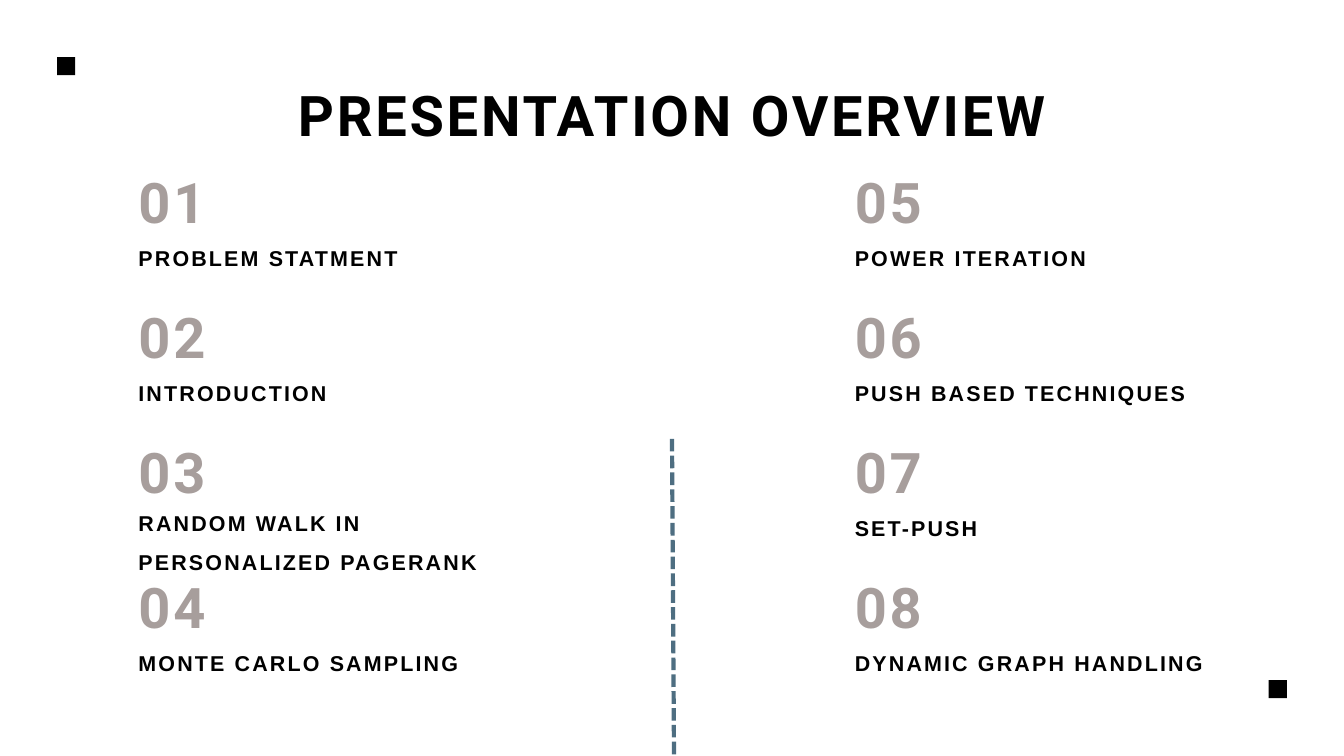
from lxml.etree import SubElement
from pptx import Presentation
from pptx.dml.color import RGBColor
from pptx.enum.dml import MSO_LINE
from pptx.enum.shapes import MSO_CONNECTOR, MSO_SHAPE
from pptx.enum.text import MSO_ANCHOR, MSO_AUTO_SIZE, PP_ALIGN
from pptx.oxml.ns import qn
from pptx.util import Inches, Pt

BLACK = RGBColor(0x00, 0x00, 0x00)
TAUPE = RGBColor(0xA7, 0x9E, 0x9C)
SLATE = RGBColor(0x4E, 0x6E, 0x81)

TITLE = "PRESENTATION OVERVIEW"
COLUMNS = [
    ["PROBLEM STATMENT", "INTRODUCTION",
     "RANDOM WALK IN PERSONALIZED PAGERANK", "MONTE CARLO SAMPLING"],
    ["POWER ITERATION", "PUSH BASED TECHNIQUES",
     "SET-PUSH", "DYNAMIC GRAPH HANDLING"],
]
TWO_LINE_TOPIC = "RANDOM WALK IN PERSONALIZED PAGERANK"

COLUMN_LEFTS = [2.06, 12.72]
COLUMN_WIDTH = 5.22
FIRST_ROW_TOP = 2.33
ROW_PITCH = 2.01
TOPIC_OFFSET = 1.25
CORNER_SQUARES = [(0.85, 0.85), (18.88, 10.12)]
SQUARE_SIZE = 0.27

HEADING = dict(font="Roboto", size=60, spacing=3, line_spacing=Pt(84))
TOPIC = dict(font="Arial", size=23, spacing=2.3, line_spacing=Pt(32.2))


def write_text(shape, text, style, color, alignment=PP_ALIGN.LEFT):
    frame = shape.text_frame
    frame.word_wrap = True
    frame.auto_size = MSO_AUTO_SIZE.SHAPE_TO_FIT_TEXT
    frame.vertical_anchor = MSO_ANCHOR.TOP
    frame.margin_left = frame.margin_right = 0
    frame.margin_top = frame.margin_bottom = 0
    paragraph = frame.paragraphs[0]
    paragraph.alignment = alignment
    paragraph.line_spacing = style["line_spacing"]
    paragraph.font.name = style["font"]
    paragraph.font.size = Pt(style["size"])
    paragraph.font.bold = True
    paragraph.font.color.rgb = color
    run = paragraph.add_run()
    run.text = text
    run._r.get_or_add_rPr().set("spc", str(round(style["spacing"] * 100)))


def add_text(slide, left, top, height, text, style, color):
    box = slide.shapes.add_textbox(
        Inches(left), Inches(top), Inches(COLUMN_WIDTH), Inches(height))
    write_text(box, text, style, color)


def add_title(slide):
    title = slide.shapes.title
    title.left, title.top = Inches(2.06), Inches(1.03)
    title.width, title.height = Inches(15.88), Inches(1.1)
    write_text(title, TITLE, HEADING, BLACK, PP_ALIGN.CENTER)


def add_agenda(slide):
    number = 1
    for left, topics in zip(COLUMN_LEFTS, COLUMNS):
        for row, topic in enumerate(topics):
            top = FIRST_ROW_TOP + row * ROW_PITCH
            add_text(slide, left, top, 1.18, f"{number:02}", HEADING, TAUPE)
            if topic == TWO_LINE_TOPIC:
                add_text(slide, left, top + 1.05, 1.11, topic,
                         TOPIC | {"line_spacing": 1.5}, BLACK)
            else:
                add_text(slide, left, top + TOPIC_OFFSET, 0.43, topic, TOPIC, BLACK)
            number += 1


def add_divider(slide):
    divider = slide.shapes.add_connector(
        MSO_CONNECTOR.STRAIGHT,
        Inches(10), Inches(6.53), Inches(10.03), Inches(11.25))
    divider.line.color.rgb = SLATE
    divider.line.width = Pt(4.5)
    divider.line.dash_style = MSO_LINE.SQUARE_DOT
    SubElement(divider._element.spPr, qn("a:effectLst"))


def add_corner_squares(slide):
    for left, top in CORNER_SQUARES:
        square = slide.shapes.add_shape(
            MSO_SHAPE.RECTANGLE, Inches(left), Inches(top),
            Inches(SQUARE_SIZE), Inches(SQUARE_SIZE))
        square.shadow.inherit = False
        square.fill.solid()
        square.fill.fore_color.rgb = BLACK
        square.line.fill.background()


def main():
    presentation = Presentation()
    presentation.slide_width = Inches(20)
    presentation.slide_height = Inches(11.25)
    slide = presentation.slides.add_slide(presentation.slide_layouts[5])
    add_title(slide)
    add_agenda(slide)
    add_divider(slide)
    add_corner_squares(slide)
    presentation.save("out.pptx")


if __name__ == "__main__":
    main()
